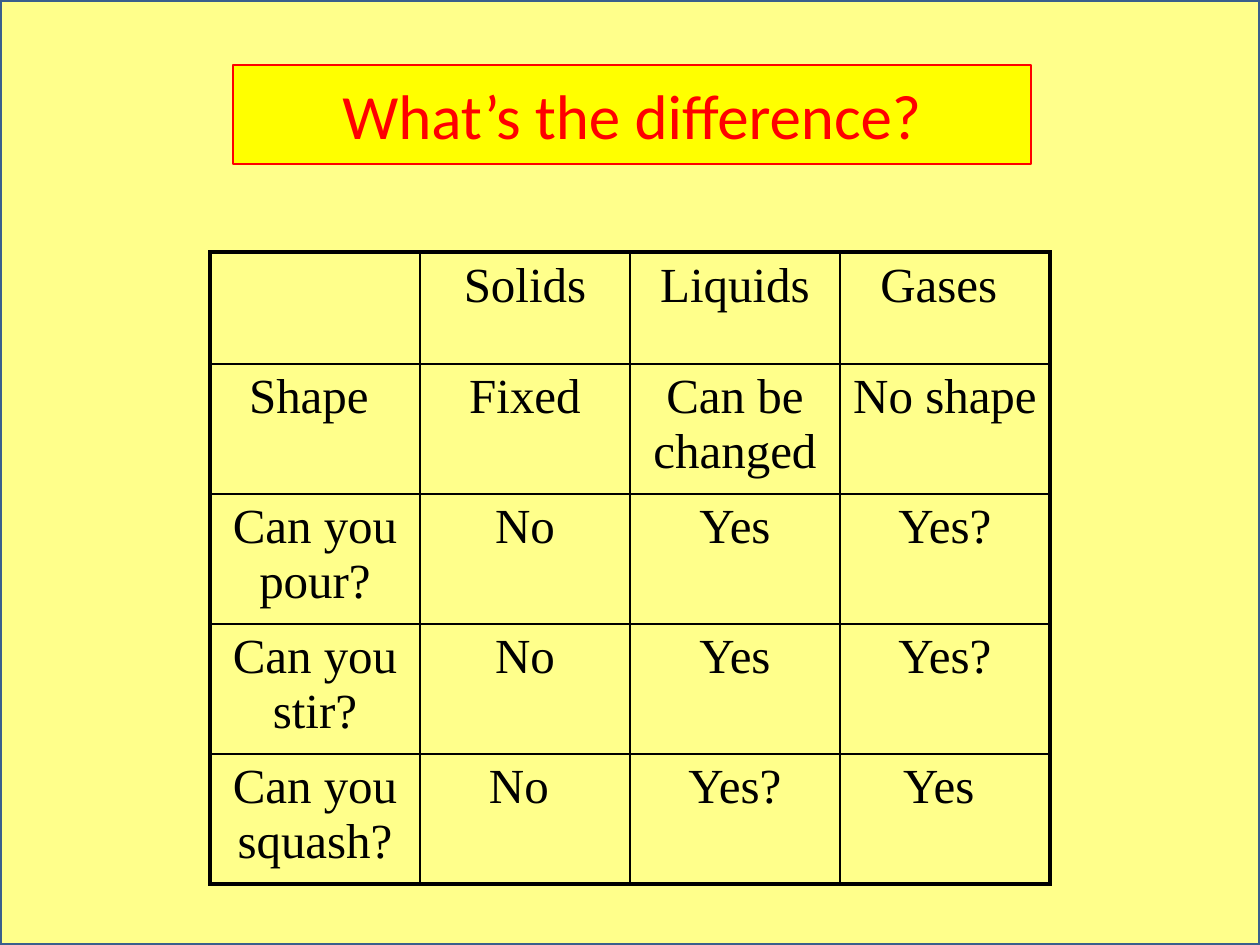
from dataclasses import dataclass

from lxml import etree
from pptx import Presentation
from pptx.dml.color import RGBColor
from pptx.enum import shapes, text
from pptx.oxml import ns
from pptx.util import Emu, Pt

PX_PER_INCH = 126


@dataclass(frozen=True)
class Theme:
    backdrop: str = "FFFF99"
    panel: str = "FFFF8B"
    panel_edge: str = "3A5F8C"
    banner: str = "FFFF00"
    accent: str = "FF0000"
    ink: str = "000000"
    title_font: str = "Calibri"
    table_font: str = "Times New Roman"
    title_size: int = 36
    table_size: int = 28
    outer_border: float = 2.25
    inner_border: float = 1


THEME = Theme()

COMPARISON = [
    ["", "Solids", "Liquids", "Gases "],
    ["Shape ", "Fixed", "Can be changed", "No shape"],
    ["Can you pour?", "No", "Yes", "Yes?"],
    ["Can you stir?", "No", "Yes", "Yes?"],
    ["Can you squash?", "No ", "Yes?", "Yes "],
]


def px(length):
    return Emu(round(length * 914400 / PX_PER_INCH))


def colour(value):
    return RGBColor.from_string(value)


def add_panel(page, box, fill, edge, edge_width):
    panel = page.shapes.add_shape(
        shapes.MSO_SHAPE.RECTANGLE, *(px(length) for length in box))
    panel.shadow.inherit = False
    panel.fill.solid()
    panel.fill.fore_color.rgb = colour(fill)
    panel.line.color.rgb = colour(edge)
    panel.line.width = Pt(edge_width)
    return panel


def write_centred(frame, words, font, size, ink):
    frame.word_wrap = True
    para = frame.paragraphs[0]
    para.alignment = text.PP_ALIGN.CENTER
    if words:
        span = para.add_run()
        span.text = words
        span.font.name = font
        span.font.size = Pt(size)
        span.font.color.rgb = colour(ink)


def set_border(cell, side, width):
    line = etree.SubElement(cell._tc.get_or_add_tcPr(), ns.qn(f"a:ln{side}"),
                            w=str(Pt(width)), cmpd="sng")
    fill = etree.SubElement(line, ns.qn("a:solidFill"))
    etree.SubElement(fill, ns.qn("a:srgbClr"), val=THEME.ink)
    etree.SubElement(line, ns.qn("a:prstDash"), val="solid")


def add_title(page, box):
    banner = add_panel(page, box, THEME.banner, THEME.accent, 0.75)
    banner.text_frame.vertical_anchor = text.MSO_ANCHOR.MIDDLE
    write_centred(banner.text_frame, "What’s the difference?",
                  THEME.title_font, THEME.title_size, THEME.accent)


def add_comparison(page, box, header_height):
    left, top, width, height = box
    row_count, column_count = len(COMPARISON), len(COMPARISON[0])
    table = page.shapes.add_table(
        row_count, column_count, px(left), px(top), px(width), px(height)).table
    table.first_row = False
    table.horz_banding = False

    # A short header above equal rows, and equal columns
    for column in table.columns:
        column.width = px(width // column_count)
    body_height = (height - header_height) // (row_count - 1)
    for index, row in enumerate(table.rows):
        row.height = px(body_height if index else header_height)

    # Thick borders around the outside, thin ones between cells
    for r, labels in enumerate(COMPARISON):
        for c, label in enumerate(labels):
            cell = table.cell(r, c)
            on_edge = {"L": c == 0, "R": c == column_count - 1,
                       "T": r == 0, "B": r == row_count - 1}
            for side, outer in on_edge.items():
                set_border(cell, side,
                           THEME.outer_border if outer else THEME.inner_border)
            cell.fill.background()
            write_centred(cell.text_frame, label, THEME.table_font,
                          THEME.table_size, THEME.ink)


def main():
    deck = Presentation()
    deck.slide_width, deck.slide_height = px(1260), px(945)
    page = deck.slides.add_slide(deck.slide_layouts[6])

    # Background and framed panel
    page.background.fill.solid()
    page.background.fill.fore_color.rgb = colour(THEME.backdrop)
    add_panel(page, (0, 0, 1260, 945), THEME.panel, THEME.panel_edge, 2)

    # Comparison table and title
    add_comparison(page, (210, 252, 840, 632), header_height=112)
    add_title(page, (233, 65, 798, 99))

    deck.save("out.pptx")


if __name__ == "__main__":
    main()
